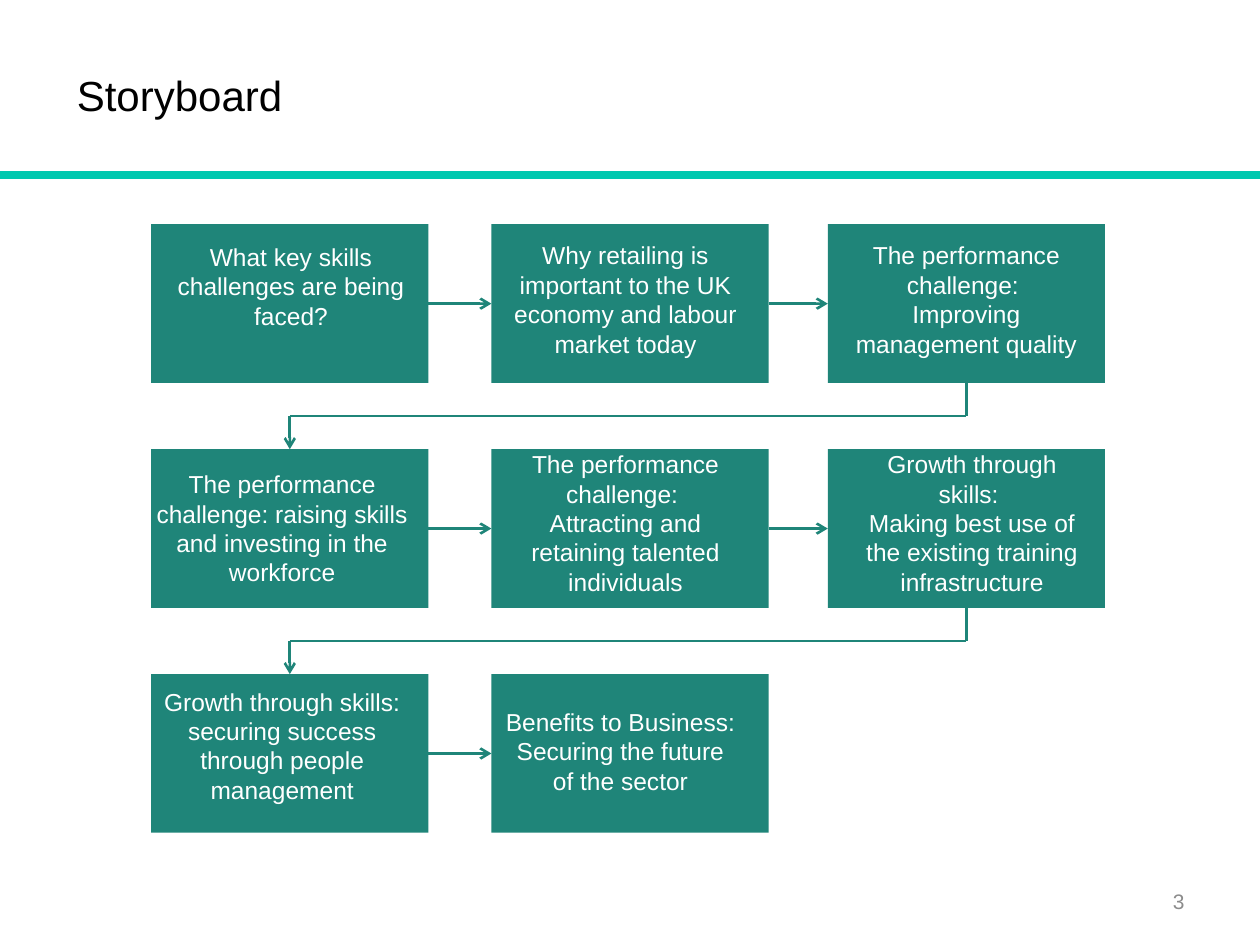
from lxml import etree
from pptx import Presentation
from pptx.dml.color import RGBColor
from pptx.enum.shapes import MSO_CONNECTOR, MSO_SHAPE
from pptx.enum.text import MSO_ANCHOR, MSO_AUTO_SIZE, PP_ALIGN
from pptx.oxml.ns import qn
from pptx.util import Inches, Pt

STRAIGHT = MSO_CONNECTOR.STRAIGHT
RECTANGLE = MSO_SHAPE.RECTANGLE
TOP, MIDDLE = MSO_ANCHOR.TOP, MSO_ANCHOR.MIDDLE
LEFT, CENTER, RIGHT = PP_ALIGN.LEFT, PP_ALIGN.CENTER, PP_ALIGN.RIGHT
NO_FIT, GROW = MSO_AUTO_SIZE.NONE, MSO_AUTO_SIZE.SHAPE_TO_FIT_TEXT
SIDE_TOP, SIDE_LEFT, SIDE_BOTTOM, SIDE_RIGHT = range(4)

TEAL, TURQUOISE = "1F8579", "00C8AF"
WIDTH, HEIGHT = 10, 7.5
COLUMNS = (1.2, 3.9, 6.57)
FIRST_ROW, ROW_STEP = 1.78, 1.785
BOX_W, BOX_H = 2.2, 1.26

# Each step: column, row, then the offset and size of its caption, and the text.
STEPS = (
    (0, 0, (-0.07, 0.09, 2.36, 0.81), "What key skills challenges are being faced?"),
    (1, 0, (0, 0.08, 2.13, 1.04),
     "Why retailing is important to the UK economy and labour market today"),
    (2, 0, (0, 0.08, 2.2, 1.04),
     "The performance challenge: \nImproving management quality"),
    (0, 1, (-0.14, 0.11, 2.36, 1.04),
     "The performance challenge: raising skills and investing in the workforce"),
    (1, 1, (0, -0.05, 2.13, 1.28),
     "The performance challenge: \nAttracting and retaining talented individuals"),
    (2, 1, (0.16, -0.05, 1.97, 1.28),
     "Growth through skills: \nMaking best use of the existing training infrastructure"),
    (0, 2, (-0.06, 0.05, 2.2, 1.04),
     "Growth through skills: securing success through people management"),
    (1, 2, (0, 0.21, 2.05, 0.81),
     "Benefits to Business: Securing the future of the sector"),
)


def rgb(value):
    """Turn a hex string into a colour."""
    return RGBColor.from_string(value)


def row_top(row):
    """Return the top of a row of boxes in inches."""
    return FIRST_ROW + row * ROW_STEP


def write(sp, text, size=14, color="FFFFFF", align=CENTER, anchor=TOP, fit=GROW):
    """Write formatted text into a shape, with a newline as a line break."""
    tf = sp.text_frame
    tf.word_wrap = True
    tf.auto_size = fit
    tf.vertical_anchor = anchor
    p = tf.paragraphs[0]
    p.text = text.replace("\n", "\v")
    p.alignment = align
    for r in p.runs:
        r.font.name = "Arial"
        r.font.size = Pt(size)
        r.font.color.rgb = rgb(color)


def add_text(slide, box, text, **fmt):
    """Add a text box at left, top, width, height."""
    write(slide.shapes.add_textbox(*map(Inches, box)), text, **fmt)


def add_title(slide, text):
    """Place and fill the title placeholder."""
    sp = slide.shapes.title
    sp.left, sp.top, sp.width, sp.height = map(Inches, (0.51, 0.13, 6.92, 1.25))
    write(sp, text, size=24, color="000000", align=LEFT, anchor=MIDDLE, fit=NO_FIT)


def add_box(slide, column, row):
    """Add one filled storyboard box."""
    place = map(Inches, (COLUMNS[column], row_top(row), BOX_W, BOX_H))
    sp = slide.shapes.add_shape(RECTANGLE, *place)
    sp.shadow.inherit = False
    sp.fill.solid()
    sp.fill.fore_color.rgb = rgb(TEAL)
    sp.line.fill.background()
    return sp


def add_line(slide, start, end, color=TEAL, width=1.5, arrow=False):
    """Add a straight line, with an open arrowhead at its end if asked."""
    line = slide.shapes.add_connector(STRAIGHT, *map(Inches, (*start, *end)))
    line.line.color.rgb = rgb(color)
    line.line.width = Pt(width)
    if arrow:
        etree.SubElement(line.line._get_or_add_ln(), qn("a:tailEnd"), type="arrow")
    etree.SubElement(line._element.spPr, qn("a:effectLst"))
    return line


def link_across(slide, boxes, column, row):
    """Join a box to its right-hand neighbour with an arrow."""
    y = row_top(row) + BOX_H / 2
    line = add_line(slide, (COLUMNS[column] + BOX_W, y), (COLUMNS[column + 1], y),
                    arrow=True)
    line.begin_connect(boxes[column, row], SIDE_RIGHT)
    line.end_connect(boxes[column + 1, row], SIDE_LEFT)


def link_down(slide, boxes, row):
    """Lead from the last box of a row to the first box of the next row."""
    first, last = COLUMNS[0] + BOX_W / 2, COLUMNS[-1] + BOX_W / 2
    bottom, below = row_top(row) + BOX_H, row_top(row + 1)
    bend = (bottom + below) / 2
    drop = add_line(slide, (last, bottom), (last, bend))
    drop.begin_connect(boxes[len(COLUMNS) - 1, row], SIDE_BOTTOM)
    add_line(slide, (first, bend), (last, bend))
    entry = add_line(slide, (first, bend), (first, below), arrow=True)
    entry.end_connect(boxes[0, row + 1], SIDE_TOP)


def main():
    """Build the storyboard slide."""
    prs = Presentation()
    prs.slide_width, prs.slide_height = Inches(WIDTH), Inches(HEIGHT)
    slide = prs.slides.add_slide(prs.slide_layouts[5])
    add_line(slide, (0, 1.39), (WIDTH, 1.39), color=TURQUOISE, width=5)
    add_title(slide, "Storyboard")
    boxes = {(column, row): add_box(slide, column, row) for column, row, *_ in STEPS}
    for column, row in boxes:
        if (column + 1, row) in boxes:
            link_across(slide, boxes, column, row)
    for row in range(2):
        link_down(slide, boxes, row)
    for column, row, (dx, dy, width, height), text in STEPS:
        add_text(slide, (COLUMNS[column] + dx, row_top(row) + dy, width, height), text)
    add_text(slide, (7.17, 6.95, 2.33, 0.4), "3", size=12, color="8C8C8C",
             align=RIGHT, anchor=MIDDLE, fit=NO_FIT)
    prs.save("out.pptx")


if __name__ == "__main__":
    main()
